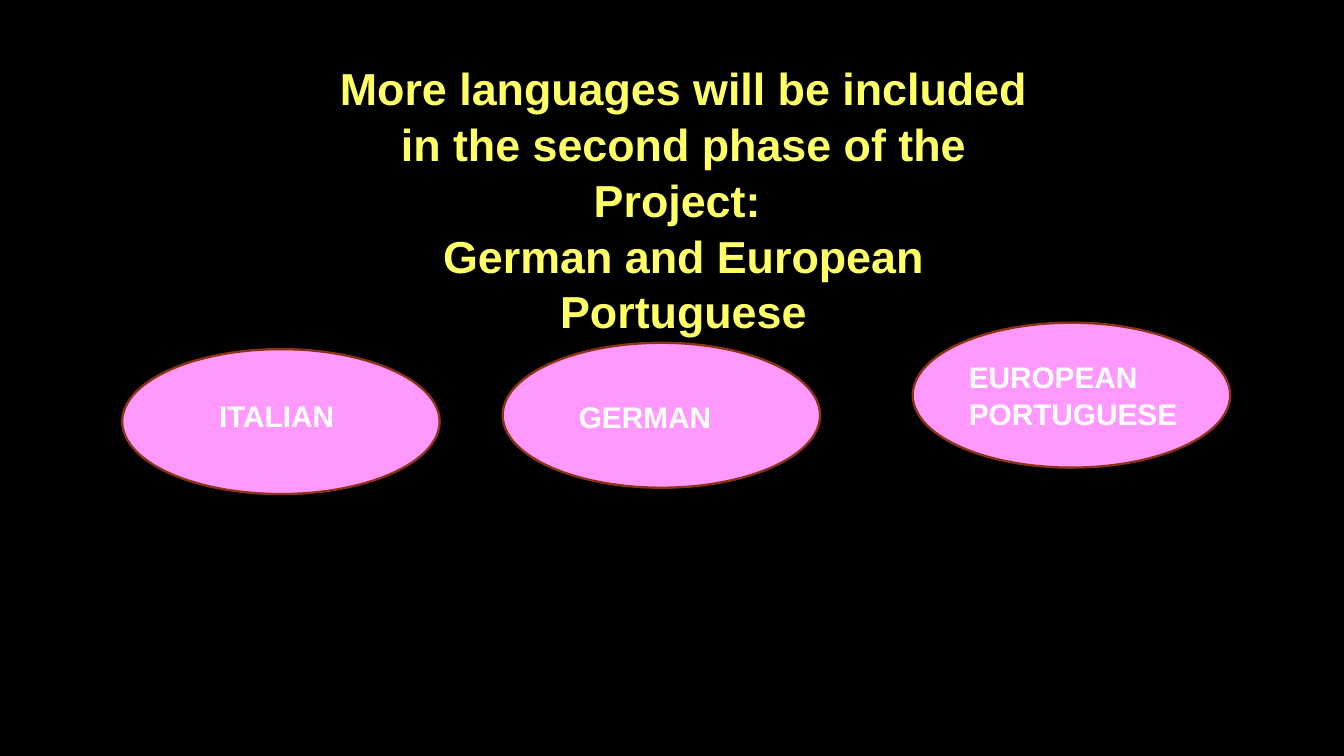
from dataclasses import dataclass

from pptx import Presentation
from pptx.dml.color import RGBColor
from pptx.enum.shapes import MSO_SHAPE
from pptx.enum.text import MSO_ANCHOR, MSO_AUTO_SIZE, PP_ALIGN
from pptx.slide import Slide
from pptx.text.text import TextFrame
from pptx.util import Cm, Pt

OVAL = MSO_SHAPE.OVAL
TOP = MSO_ANCHOR.TOP
FIXED = MSO_AUTO_SIZE.NONE
LEFT, CENTER = PP_ALIGN.LEFT, PP_ALIGN.CENTER

BLACK = RGBColor(0x00, 0x00, 0x00)
YELLOW = RGBColor(0xFF, 0xFF, 0x66)
PINK = RGBColor(0xFF, 0x99, 0xFF)
BROWN = RGBColor(0x8B, 0x33, 0x14)
WHITE = RGBColor(0xFF, 0xFF, 0xFF)

TITLE = "\n".join((
    "More languages will be included",
    "in the second phase of the Project: ",
    "German and European Portuguese",
))
TITLE_FONT = {"name": "Arial", "size": Pt(24), "bold": True}
LABEL_FONT = {**TITLE_FONT, "size": Pt(16)}
FRAME = {"word_wrap": True, "auto_size": FIXED, "vertical_anchor": TOP}
OVAL_SIZE = Cm(6), Cm(2.74)


@dataclass(frozen=True)
class Language:
    """An oval at x, y with its label at text_x, text_y (all in cm)."""
    name: str
    x: float
    y: float
    text_x: float
    text_y: float
    width: float = 3.56
    height: float = 0.94


LANGUAGES = (
    Language("ITALIAN", 2.31, 6.6, 3.89, 7.37),
    Language("GERMAN", 9.5, 6.48, 10.69, 7.39),
    Language("EUROPEAN PORTUGUESE", 17.25, 6.1, 18.06, 6.63, 4.78, 1.63),
)


def apply(target: object, values: dict) -> None:
    for name, value in values.items():
        setattr(target, name, value)


def write(frame: TextFrame, text: str, font: dict, color: RGBColor,
          align: PP_ALIGN) -> None:
    apply(frame, FRAME)
    frame.text = text
    for para in frame.paragraphs:
        apply(para, {"alignment": align, "line_spacing": 1.04})
        for run in para.runs:
            apply(run.font, font)
            run.font.color.rgb = color


def add_title(slide: Slide) -> None:
    title = slide.shapes.title
    apply(title, {"left": Cm(6.12), "top": Cm(0.98),
                  "width": Cm(13.59), "height": Cm(3.33)})
    write(title.text_frame, TITLE, TITLE_FONT, YELLOW, CENTER)


def add_language(slide: Slide, lang: Language) -> None:
    oval = slide.shapes.add_shape(OVAL, Cm(lang.x), Cm(lang.y), *OVAL_SIZE)
    oval.shadow.inherit = False
    oval.fill.solid()
    oval.fill.fore_color.rgb = PINK
    oval.line.color.rgb = BROWN
    oval.line.width = Pt(1.25)
    label = slide.shapes.add_textbox(Cm(lang.text_x), Cm(lang.text_y),
                                     Cm(lang.width), Cm(lang.height))
    write(label.text_frame, lang.name, LABEL_FONT, WHITE, LEFT)


def main() -> None:
    deck = Presentation()
    apply(deck, {"slide_width": Cm(25.4), "slide_height": Cm(14.29)})
    slide = deck.slides.add_slide(deck.slide_layouts.get_by_name("Title Only"))
    slide.background.fill.solid()
    slide.background.fill.fore_color.rgb = BLACK
    add_title(slide)
    for lang in LANGUAGES:
        add_language(slide, lang)
    deck.save("out.pptx")


if __name__ == "__main__":
    main()
